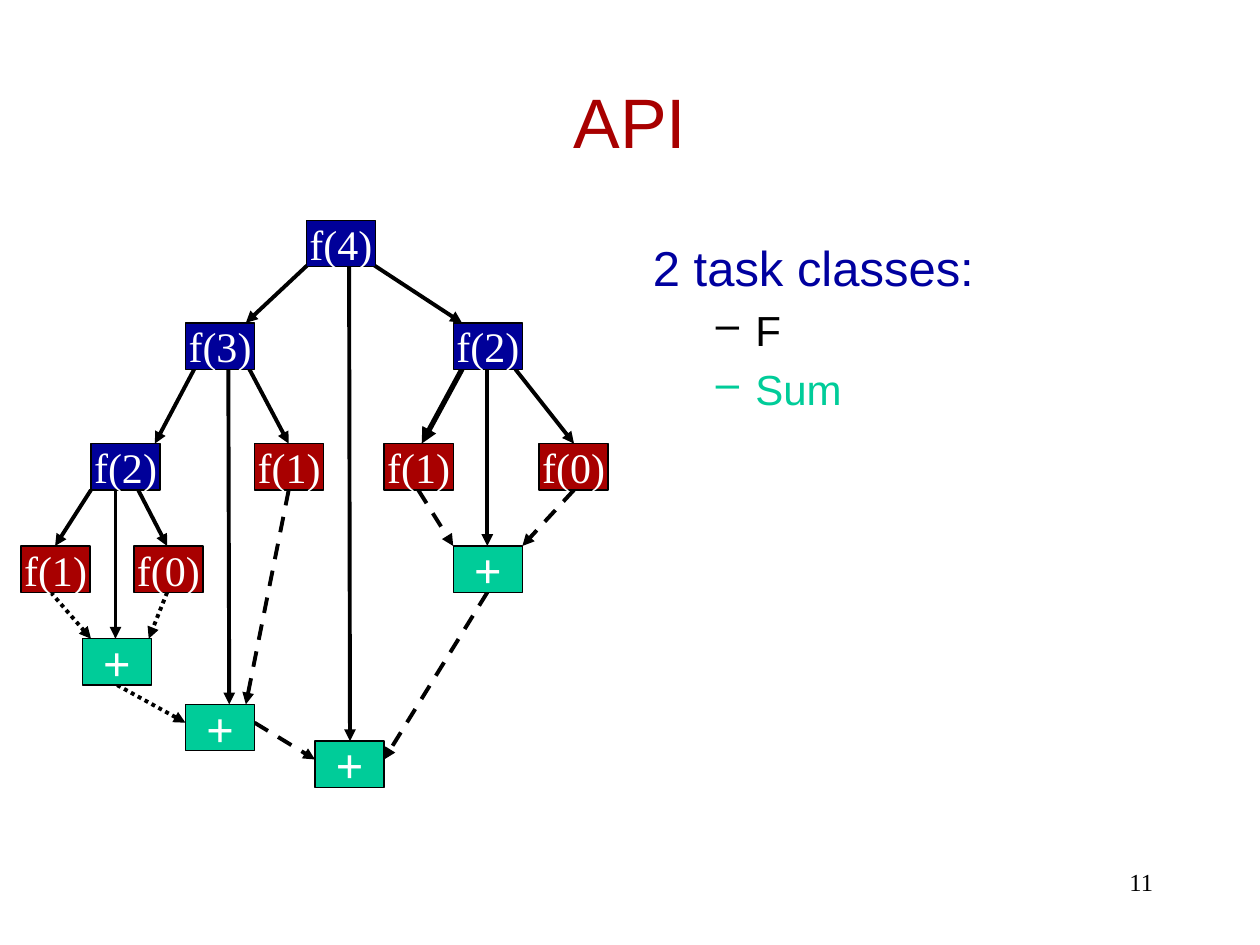
from lxml import etree
from pptx import Presentation
from pptx.dml.color import RGBColor
from pptx.enum import dml, shapes, text
from pptx.oxml.ns import qn
from pptx.util import Pt

COLORS = {"title": "A80000", "heading": "00009F", "call": "000099", "leaf": "A80000",
          "sum": "00CC99", "ink": "000000", "paper": "FFFFFF"}
SANS, SERIF = "Arial", "Times New Roman"
W, H = 39.5, 26.5   # node size
SIDE = 10.5         # height at which arrows meet the side of a node
DASH, DOT = dml.MSO_LINE.DASH, dml.MSO_LINE.ROUND_DOT

# Task tree: name -> (label, kind, left, top)
NODES = {
    "f3": ("f(3)", "call", 106, 184.5),
    "f2 right": ("f(2)", "call", 259, 184.5),
    "f2 left": ("f(2)", "call", 52, 253.5),
    "f1 middle": ("f(1)", "leaf", 145.5, 253.5),
    "f1 right": ("f(1)", "leaf", 219.5, 253.5),
    "f0 right": ("f(0)", "leaf", 308, 253.5),
    "f1 left": ("f(1)", "leaf", 12, 312),
    "f0 left": ("f(0)", "leaf", 76.5, 312),
    "sum2 right": ("+", "sum", 259, 312),
    "sum2 left": ("+", "sum", 47, 365),
    "sum3": ("+", "sum", 106, 402.5),
    "sum4": ("+", "sum", 180, 423.5),
    "f4": ("f(4)", "call", 175, 126),
}

# Arrows: (source, x, y), (target, x, y), dash, width; x and y are offsets in the node
ARROWS = [
    (("f4", 24.5, 21.5), ("sum4", 20, 0), None, 2.25),
    (("f4", 5, 21.5), ("f3", 34.5, 0), None, 2.25),
    (("f4", 32.5, 21.5), ("f2 right", 5, 0), None, 2.25),
    (("f3", 24.5, H), ("sum3", 25, 0), None, 2.25),
    (("f3", 5, H), ("f2 left", 36.5, 0), None, 2.25),
    (("f3", 36.5, H), ("f1 middle", 19.5, 0), None, 2.25),
    (("f2 right", 19.5, H), ("sum2 right", 19.5, 0), None, 2.25),
    (("f2 right", 35.5, H), ("f0 right", 20, 0), None, 2.25),
    (("f2 right", 5, H), ("f1 right", 21.5, 0), None, 3),
    (("f2 left", 14, H), ("sum2 left", 19, 0), None, 2.25),
    (("f2 left", 0, H), ("f1 left", 19.5, 0), None, 2.25),
    (("f2 left", 27, H), ("f0 left", 19, 0), None, 2.25),
    (("f0 right", 20, H), ("sum2 right", W, 0), DASH, 2.25),
    (("f1 right", 19.5, H), ("sum2 right", 0, 0), DASH, 2.25),
    (("f1 middle", 19.5, H), ("sum3", 34.5, 0), DASH, 2.25),
    (("sum3", W, SIDE), ("sum4", 0, SIDE), DASH, 2.25),
    (("sum2 right", 19.5, H), ("sum4", W, SIDE), DASH, 2.25),
    (("f0 left", 19, H), ("sum2 left", 38, 0), DOT, 2.25),
    (("f1 left", 17, H), ("sum2 left", 5, 0), DOT, 2.25),
    (("sum2 left", 20, H), ("sum3", 0, SIDE), DOT, 2.25),
]

# Task classes: text, size, colour, left margin, hanging indent, bullet
CLASSES = [
    ("2 task classes:", 28, "heading", 27, -27, None),
    ("F", 24, "ink", 58.5, -22.5, "–"),
    ("Sum", 24, "sum", 58.5, -22.5, "–"),
]


def rgb(name):
    return RGBColor.from_string(COLORS[name])


def write(p, content, size, font, color, align, bold=False):
    p.alignment = align
    r = p.add_run()
    r.text = content
    for key, value in {"size": Pt(size), "name": font, "bold": bold}.items():
        setattr(r.font, key, value)
    r.font.color.rgb = rgb(color)


def place(sp, *box):
    for key, value in zip(("left", "top", "width", "height"), box):
        setattr(sp, key, Pt(value))


def add_arrow(s, start, end, dash, width):
    (x1, y1), (x2, y2) = [(NODES[n][2] + dx, NODES[n][3] + dy) for n, dx, dy in (start, end)]
    c = s.shapes.add_connector(shapes.MSO_CONNECTOR.STRAIGHT, Pt(x1), Pt(y1), Pt(x2), Pt(y2))
    c.line.color.rgb = rgb("ink")
    c.line.width = Pt(width)
    if dash:
        c.line.dash_style = dash
    etree.SubElement(c.line._get_or_add_ln(), qn("a:tailEnd"), type="triangle")
    etree.SubElement(c._element.spPr, qn("a:effectLst"))


def add_node(s, label, kind, left, top):
    sp = s.shapes.add_shape(shapes.MSO_SHAPE.RECTANGLE, Pt(left), Pt(top), Pt(W), Pt(H))
    sp.shadow.inherit = False
    sp.fill.solid()
    sp.fill.fore_color.rgb = rgb(kind)
    sp.line.color.rgb = rgb("ink")
    sp.line.width = Pt(0.75)
    tf = sp.text_frame
    tf.word_wrap = False
    tf.vertical_anchor = text.MSO_ANCHOR.MIDDLE
    is_sum = kind == "sum"
    write(tf.paragraphs[0], label, 28 if is_sum else 24, SERIF, "paper",
          text.PP_ALIGN.CENTER, is_sum)


def add_textbox(s, *box):
    tf = s.shapes.add_textbox(*map(Pt, box)).text_frame
    tf.word_wrap = True
    return tf


def main():
    prs = Presentation()
    prs.slide_width, prs.slide_height = Pt(720), Pt(540)
    s = prs.slides.add_slide(prs.slide_layouts[5])

    # Title
    title = s.shapes.title
    place(title, 54, 24, 612, 90)
    title.text_frame.vertical_anchor = text.MSO_ANCHOR.MIDDLE
    write(title.text_frame.paragraphs[0], "API", 40, SANS, "title", text.PP_ALIGN.CENTER)

    # Slide number
    tf = add_textbox(s, 516, 492, 150, 36)
    write(tf.paragraphs[0], "11", 14, SERIF, "ink", text.PP_ALIGN.RIGHT)

    # List of task classes
    tf = add_textbox(s, 366, 132, 300, 348)
    for i, (content, size, color, margin, indent, bullet) in enumerate(CLASSES):
        p = tf.add_paragraph() if i else tf.paragraphs[0]
        write(p, content, size, SANS, color, text.PP_ALIGN.LEFT)
        pPr = p._p.get_or_add_pPr()
        pPr.set("marL", str(Pt(margin)))
        pPr.set("indent", str(Pt(indent)))
        before = etree.SubElement(pPr, qn("a:spcBef"))
        etree.SubElement(before, qn("a:spcPct"), val="20000")
        if bullet:
            etree.SubElement(pPr, qn("a:buChar"), char=bullet)

    # Task tree
    for arrow in ARROWS:
        add_arrow(s, *arrow)
    for node in NODES.values():
        add_node(s, *node)

    prs.save("out.pptx")


if __name__ == "__main__":
    main()
